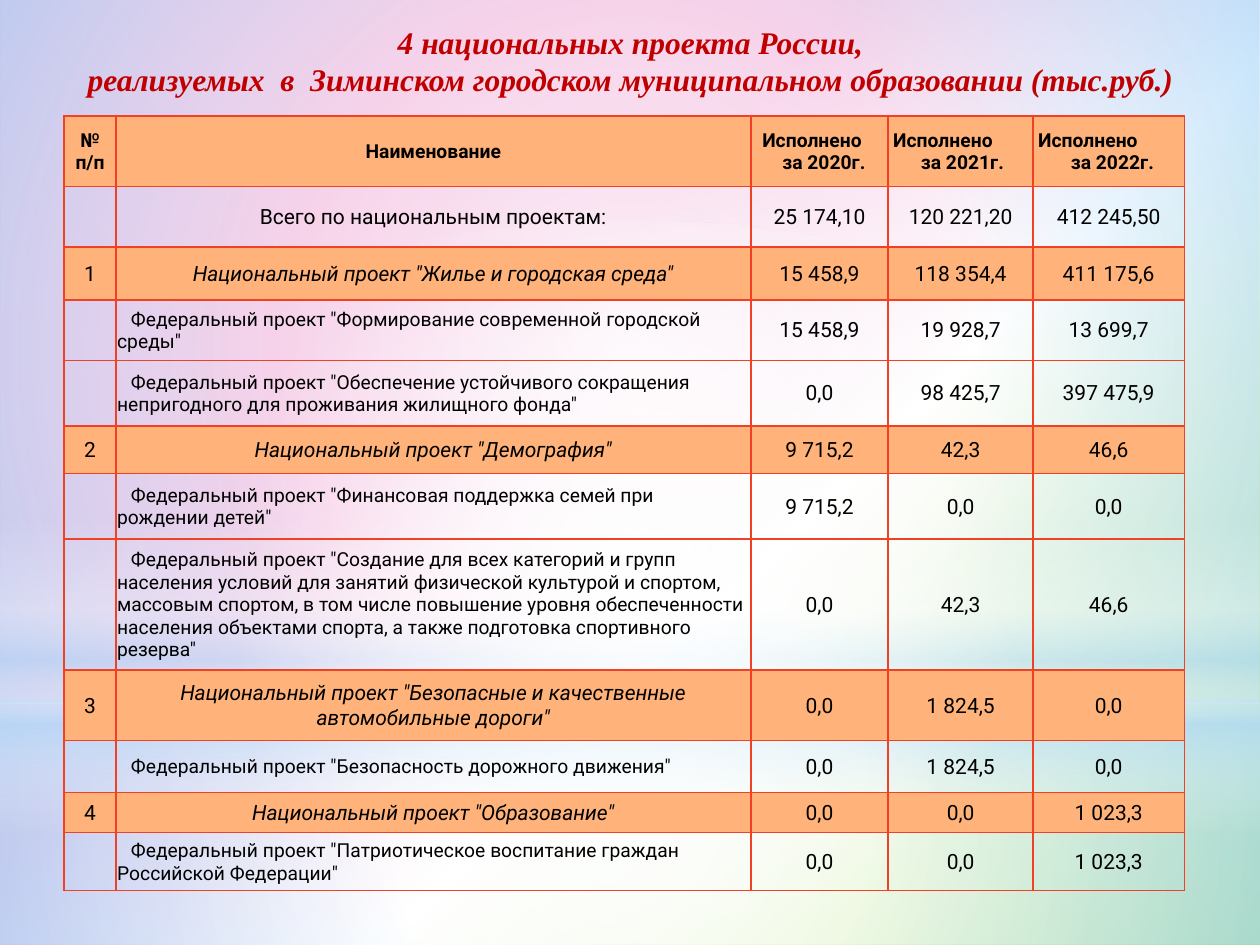
from dataclasses import dataclass
from typing import Any, Optional

from lxml import etree
from pptx import Presentation
from pptx.dml.color import RGBColor
from pptx.enum.shapes import MSO_SHAPE
from pptx.enum.text import MSO_ANCHOR, MSO_AUTO_SIZE, PP_ALIGN
from pptx.oxml.ns import qn
from pptx.util import Inches, Pt

RECT, OVAL = MSO_SHAPE.RECTANGLE, MSO_SHAPE.OVAL
CENTER, LEFT = PP_ALIGN.CENTER, PP_ALIGN.LEFT
TOP, MIDDLE = MSO_ANCHOR.TOP, MSO_ANCHOR.MIDDLE
SHAPE_TO_FIT = MSO_AUTO_SIZE.SHAPE_TO_FIT_TEXT

COLORS = {
    "title": "C00000", "text": "000000", "border": "F14124", "band": "FFB37A",
    "pink": "EA8AC8", "white": "FFFFFF", "green": "81D31A", "sky": "B4DCFA",
}


@dataclass
class Stop:
    pos: int
    color: str
    alpha: int = 100


@dataclass
class Glow:
    """A translucent backdrop shape; no angle means a radial gradient."""
    shape: Any
    top: float
    height: float
    stops: list[Stop]
    angle: Optional[int] = None


@dataclass
class Row:
    kind: str
    height: float
    number: str
    name: str
    values: list[str]


BACKGROUND = [Stop(0, "pink"), Stop(39, "pink"), Stop(60, "white"), Stop(100, "green")]
GLOWS = [
    Glow(RECT, 5.58, 1.92, [Stop(0, "white", 91), Stop(37, "white", 76), Stop(100, "sky", 79)]),
    Glow(RECT, 0, 5.58, [Stop(0, "white", 89), Stop(48, "white", 62), Stop(100, "sky", 79)]),
    Glow(RECT, 4.12, 2.5, [Stop(0, "white", 0), Stop(29, "white", 30), Stop(45, "sky", 40),
                           Stop(55, "white", 26), Stop(65, "sky", 60), Stop(100, "white", 0)], 90),
    Glow(OVAL, 1.75, 5.58, [Stop(0, "white"), Stop(56, "white", 0)]),
]

TITLE = ["4 национальных проекта России,",
         "реализуемых  в  Зиминском городском муниципальном образовании (тыс.руб.)"]
COLUMNS = [0.41, 5.04, 1.09, 1.15, 1.2]
# Left margin and first-line indent of the stepped year headings
YEAR_INDENTS = [(0.24, -0.16), (0.25, -0.22), (0.29, -0.26)]
FEDERAL_INDENT = (0, 0.11)
ROWS = [
    Row("header", 0.56, "№ п/п", "Наименование",
        [f"Исполнено\vза {year}г." for year in (2020, 2021, 2022)]),
    Row("total", 0.48, "", "Всего по национальным проектам:",
        ["25 174,10", "120 221,20", "412 245,50"]),
    Row("national", 0.42, "1", 'Национальный проект "Жилье и городская среда"',
        ["15 458,9", "118 354,4", "411 175,6"]),
    Row("federal", 0.48, "", 'Федеральный проект "Формирование современной городской среды"',
        ["15 458,9", "19 928,7", "13 699,7"]),
    Row("federal", 0.52, "", 'Федеральный проект "Обеспечение устойчивого сокращения '
        'непригодного для проживания жилищного фонда"', ["0,0", "98 425,7", "397 475,9"]),
    Row("national", 0.38, "2", 'Национальный проект "Демография"', ["9 715,2", "42,3", "46,6"]),
    Row("federal", 0.52, "", 'Федеральный проект "Финансовая поддержка семей при рождении детей"',
        ["9 715,2", "0,0", "0,0"]),
    Row("federal", 1.04, "", 'Федеральный проект "Создание для всех категорий и групп населения '
        'условий для занятий физической культурой и спортом, массовым спортом, в том числе '
        'повышение уровня обеспеченности населения объектами спорта, а также подготовка '
        'спортивного резерва"', ["0,0", "42,3", "46,6"]),
    Row("national", 0.56, "3", 'Национальный проект "Безопасные и качественные автомобильные дороги"',
        ["0,0", "1 824,5", "0,0"]),
    Row("federal", 0.41, "", 'Федеральный проект "Безопасность дорожного движения"',
        ["0,0", "1 824,5", "0,0"]),
    Row("national", 0.32, "4", 'Национальный проект "Образование"', ["0,0", "0,0", "1 023,3"]),
    Row("federal", 0.46, "", 'Федеральный проект "Патриотическое воспитание граждан '
        'Российской Федерации"', ["0,0", "0,0", "1 023,3"]),
]


def set_attrs(target: Any, values: dict[str, Any]) -> None:
    for name, value in values.items():
        setattr(target, name, value)


def rgb(name: str) -> RGBColor:
    return RGBColor.from_string(COLORS[name])


def add_color(parent: Any, name: str, alpha: int = 100) -> None:
    color = etree.SubElement(parent, qn("a:srgbClr"), val=COLORS[name])
    if alpha < 100:
        etree.SubElement(color, qn("a:alpha"), val=str(alpha * 1000))


def apply_gradient(fill: Any, owner: Any, stops: list[Stop], angle: Optional[int]) -> None:
    """Give fill these stops, at a clockwise angle or spreading from the centre."""
    fill.gradient()
    grad = owner.xpath(".//a:gradFill")[0]
    for child in list(grad):
        grad.remove(child)
    gs_list = etree.SubElement(grad, qn("a:gsLst"))
    for stop in stops:
        gs = etree.SubElement(gs_list, qn("a:gs"), pos=str(stop.pos * 1000))
        add_color(gs, stop.color, stop.alpha)
    if angle is None:
        radial = etree.SubElement(grad, qn("a:path"), path="circle")
        etree.SubElement(radial, qn("a:fillToRect"), {side: "50000" for side in "ltrb"})
    else:
        etree.SubElement(grad, qn("a:lin"), ang=str(angle * 60000), scaled="0")


def add_glow(slide: Any, glow: Glow) -> None:
    sp = slide.shapes.add_shape(glow.shape, 0, Inches(glow.top), Inches(10), Inches(glow.height))
    sp.shadow.inherit = False
    sp.line.fill.background()
    apply_gradient(sp.fill, sp._element.spPr, glow.stops, glow.angle)


def format_title(title: Any) -> None:
    set_attrs(title, {"left": Inches(0.2), "top": Inches(0.13),
                      "width": Inches(9.61), "height": Inches(0.71)})
    tf = title.text_frame
    tf.text = "\n".join(TITLE)
    set_attrs(tf, {"word_wrap": True, "vertical_anchor": TOP, "auto_size": SHAPE_TO_FIT})
    for p in tf.paragraphs:
        p.alignment = CENTER
        set_attrs(p.runs[0].font, {"name": "Times New Roman", "size": Pt(18),
                                   "bold": True, "italic": True})
        p.runs[0].font.color.rgb = rgb("title")


def add_borders(cell: Any) -> None:
    tc_pr = cell._tc.get_or_add_tcPr()
    for i, side in enumerate(("lnL", "lnR", "lnT", "lnB")):
        ln = etree.Element(qn(f"a:{side}"), w=str(Pt(1)))
        add_color(etree.SubElement(ln, qn("a:solidFill")), "border")
        tc_pr.insert(i, ln)


def format_cell(cell: Any, text: str, kind: str, col: int) -> None:
    is_name, header = col == 1, kind == "header"
    federal_name = is_name and kind == "federal"
    inset = Inches(0.01)
    set_attrs(cell, {"text": text, "vertical_anchor": MIDDLE, "margin_left": inset,
                     "margin_right": inset, "margin_top": inset, "margin_bottom": 0})
    if kind in ("header", "national"):
        cell.fill.solid()
        cell.fill.fore_color.rgb = rgb("band")
    else:
        cell.fill.background()
    add_borders(cell)

    p = cell.text_frame.paragraphs[0]
    year = header and col > 1
    p.alignment = LEFT if federal_name or year else CENTER
    if federal_name or year:
        margin, indent = YEAR_INDENTS[col - 2] if year else FEDERAL_INDENT
        p_pr = p._p.get_or_add_pPr()
        p_pr.set("marL", str(Inches(margin)))
        p_pr.set("indent", str(Inches(indent)))
    for r in p.runs:
        set_attrs(r.font, {"name": "Roboto", "size": Pt(11 if header or federal_name else 12),
                           "bold": header, "italic": is_name and kind == "national"})
        r.font.color.rgb = rgb("text")


def add_projects_table(slide: Any) -> None:
    table = slide.shapes.add_table(len(ROWS), len(COLUMNS), Inches(0.51), Inches(0.92),
                                   Inches(sum(COLUMNS)),
                                   Inches(sum(row.height for row in ROWS))).table
    set_attrs(table, {"first_row": False, "horz_banding": False})
    for column, width in zip(table.columns, COLUMNS):
        column.width = Inches(width)
    for i, row in enumerate(ROWS):
        table.rows[i].height = Inches(row.height)
        for col, text in enumerate([row.number, row.name, *row.values]):
            format_cell(table.cell(i, col), text, row.kind, col)


def main() -> None:
    prs = Presentation()
    set_attrs(prs, {"slide_width": Inches(10), "slide_height": Inches(7.5)})
    slide = prs.slides.add_slide(prs.slide_layouts[5])
    apply_gradient(slide.background.fill, slide._element, BACKGROUND, 45)
    for glow in GLOWS:
        add_glow(slide, glow)
    add_projects_table(slide)
    title = slide.shapes.title
    format_title(title)
    slide.shapes._spTree.append(title._element)  # bring the title to the front
    prs.save("out.pptx")


if __name__ == "__main__":
    main()
